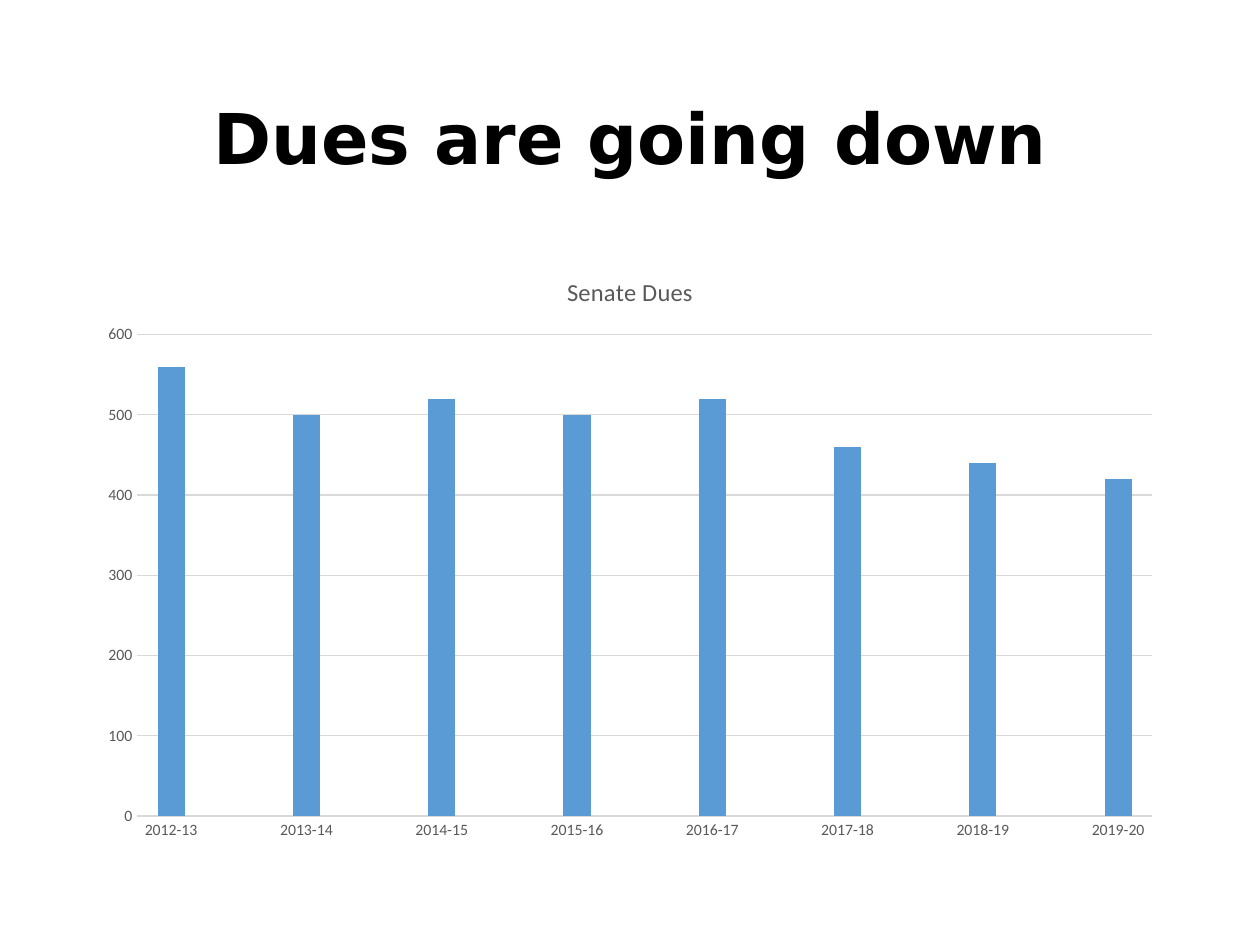
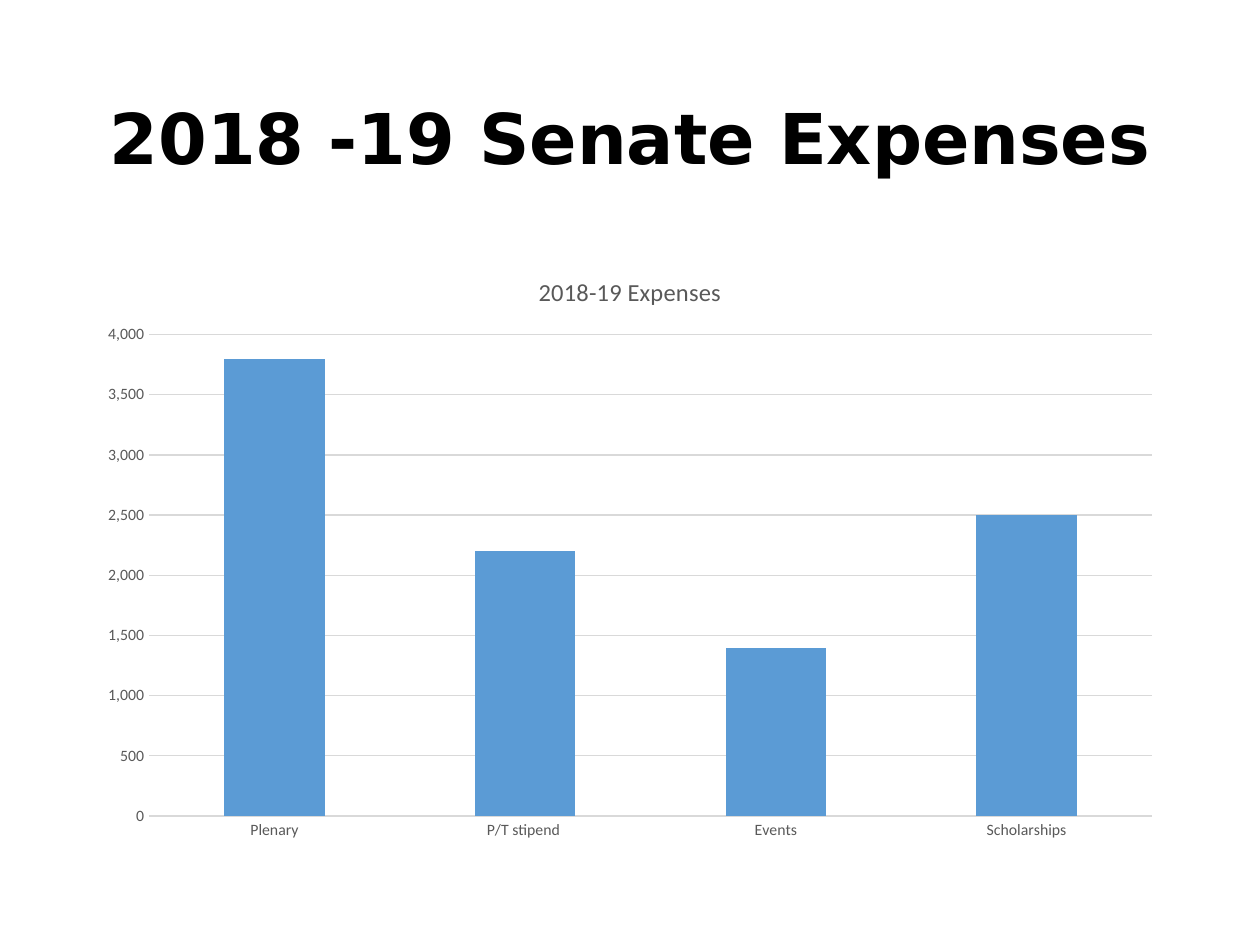
from lxml import etree
from pptx import Presentation
from pptx.chart.data import CategoryChartData as Data
from pptx.dml.color import RGBColor as RGB
from pptx.enum.chart import XL_CHART_TYPE as Kind, XL_TICK_MARK as Tick
from pptx.enum.text import MSO_ANCHOR as Anchor, MSO_AUTO_SIZE as Fit, PP_ALIGN as Align
from pptx.oxml.ns import qn
from pptx.util import Pt

HUES = {"title": "000000", "label": "595959", "grid": "D9D9D9", "bar": "5B9BD5"}
LEFT, WIDE, HIGH = 49.5, 621, 342.7
HEAD = {"left": LEFT, "top": 28.75, "width": WIDE, "height": 104.4}
# Plot edges, in points from the corner of the chart
TOP, RIGHT, TALL = 47.2, 608.8, 275.2
FONTS = {
    "title": {"name": "DejaVu Sans", "size": 40, "bold": True},
    "caption": {"name": "Calibri", "size": 14, "bold": False},
    "label": {"name": "Calibri", "size": 9, "bold": False},
}

YEARS = [f"{year}-{year - 1999}" for year in range(2012, 2020)]
DUES = [560, 500, 520, 500, 520, 460, 440, 420]
# An empty slot stands between each two years.
slots = [name for year in YEARS for name in (year, "")][:-1]
fees = [value for due in DUES for value in (due, None)][:-1]

PAGES = [
    {"title": "Dues are going down", "caption": "Senate Dues",
     "names": slots, "values": fees, "top": 600, "step": 100,
     "format": "General", "inset": 29},
    {"title": "2018 -19 Senate Expenses", "caption": "2018-19 Expenses",
     "names": ["Plenary", "P/T stipend ", "Events", "Scholarships"],
     "values": [3800, 2200, 1400, 2500], "top": 4000, "step": 500,
     "format": "#,##0", "inset": 35.7},
]


def style(font, role, hue):
    for key, value in FONTS[role].items():
        setattr(font, key, Pt(value) if key == "size" else value)
    font.color.rgb = RGB.from_string(HUES[hue])


def place(chart, inset):
    """Fix the inner plot area, given its left inset in points."""
    area = chart.element.find(".//" + qn("c:plotArea"))
    layout = area.find(qn("c:layout"))
    if layout is None:
        layout = etree.Element(qn("c:layout"))
        area.insert(0, layout)
    manual = etree.SubElement(layout, qn("c:manualLayout"))
    values = {"layoutTarget": "inner", "xMode": "edge", "yMode": "edge",
              "x": inset / WIDE, "y": TOP / HIGH,
              "w": (RIGHT - inset) / WIDE, "h": TALL / HIGH}
    for tag, value in values.items():
        etree.SubElement(manual, qn("c:" + tag)).set("val", str(value))


deck = Presentation()
deck.slide_width, deck.slide_height = Pt(720), Pt(540)

for page in PAGES:
    slide = deck.slides.add_slide(deck.slide_layouts[5])

    title = slide.shapes.title
    for key, value in HEAD.items():
        setattr(title, key, Pt(value))
    frame = title.text_frame
    frame.text = page["title"]
    frame.auto_size = Fit.NONE
    frame.vertical_anchor = Anchor.MIDDLE
    para = frame.paragraphs[0]
    para.alignment, para.line_spacing = Align.CENTER, 0.9
    style(para.runs[0].font, "title", "title")

    data = Data()
    data.categories = page["names"]
    data.add_series("Series 1", page["values"])
    chart = slide.shapes.add_chart(
        Kind.COLUMN_STACKED, Pt(LEFT), Pt(144), Pt(WIDE), Pt(HIGH), data).chart
    chart.has_legend = False
    chart.has_title = True
    caption = chart.chart_title
    caption.include_in_layout = False
    caption.text_frame.text = page["caption"]
    style(caption.text_frame.paragraphs[0].runs[0].font, "caption", "label")

    bars = chart.plots[0]
    bars.gap_width, bars.overlap, bars.vary_by_categories = 150, 100, False
    fill = bars.series[0].format.fill
    fill.solid()
    fill.fore_color.rgb = RGB.from_string(HUES["bar"])

    base, scale = chart.category_axis, chart.value_axis
    for axis in (base, scale):
        axis.major_tick_mark = axis.minor_tick_mark = Tick.NONE
        style(axis.tick_labels.font, "label", "label")
    scale.minimum_scale, scale.maximum_scale = 0, page["top"]
    scale.major_unit = page["step"]
    scale.tick_labels.number_format = page["format"]
    scale.tick_labels.number_format_is_linked = False
    scale.format.line.fill.background()
    for line in (base.format.line, scale.major_gridlines.format.line):
        line.color.rgb = RGB.from_string(HUES["grid"])
        line.width = Pt(0.75)
    place(chart, page["inset"])

deck.save("out.pptx")
